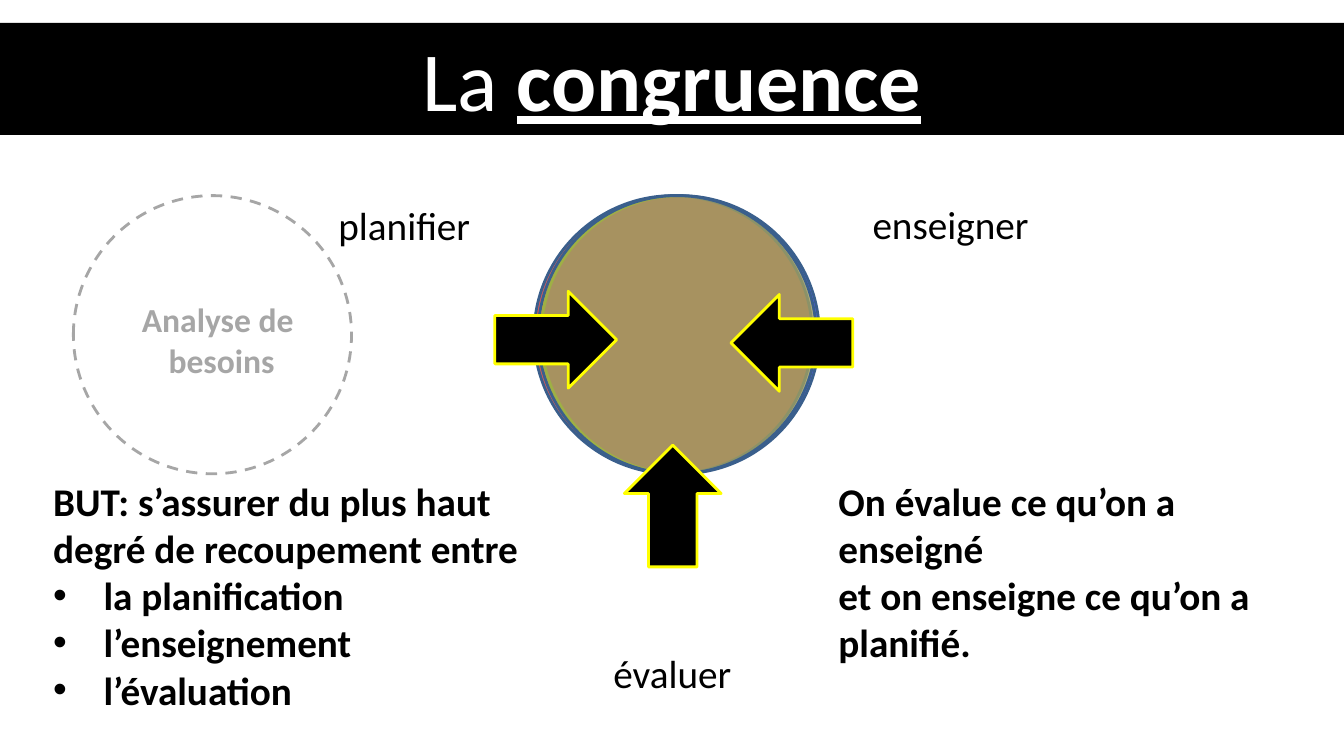
from lxml import etree
from pptx import Presentation
from pptx.dml.color import RGBColor
from pptx.enum.dml import MSO_LINE
from pptx.enum.shapes import MSO_SHAPE as SHAPE
from pptx.enum.text import MSO_ANCHOR as ANCHOR, MSO_AUTO_SIZE as AUTO, PP_ALIGN as ALIGN
from pptx.oxml.ns import qn
from pptx.util import Cm, Pt

COLORS = {
    "black": "000000", "white": "FFFFFF", "gray": "A6A6A6", "outline": "3A5F8C",
    "red": "C00000", "blue": "0000FF", "yellow": "FFFF00",
}


def rgb(name):
    return RGBColor.from_string(COLORS[name])


class SlideBuilder:
    """Holds the text style and the slide being filled."""

    def __init__(self, slide, font="Calibri", size=28):
        self.slide, self.font, self.size = slide, font, size

    def shape(self, kind, box, fill, line=None, alpha=None):
        """Box is left, top, width, height in cm; alpha is opacity in percent."""
        s = self.slide.shapes.add_shape(kind, *map(Cm, box))
        s.shadow.inherit = False
        s.fill.solid()
        s.fill.fore_color.rgb = rgb(fill)
        if alpha is not None:
            clr = s.fill._xPr.find(qn("a:solidFill"))[0]
            etree.SubElement(clr, qn("a:alpha")).set("val", str(alpha * 1000))
        if line:
            s.line.color.rgb = rgb(line)
            s.line.width = Pt(2)
        else:
            s.line.fill.background()
        return s

    def circle(self, left, fill, alpha, line="outline"):
        return self.shape(SHAPE.OVAL, (left, 4.93, 7.01, 7.01), fill, line, alpha)

    def arrow(self, left, top, rotation):
        s = self.shape(SHAPE.RIGHT_ARROW, (left, top, 3.07, 2.44), "black", "yellow")
        s.rotation = rotation

    def format_run(self, r, color, bold=False, size=None):
        r.font.name = self.font
        r.font.size = Pt(size or self.size)
        r.font.bold = bold
        r.font.color.rgb = rgb(color)

    def text(self, box, lines, color="black", bold=False, size=None,
             align=ALIGN.LEFT, wrap=False):
        tb = self.slide.shapes.add_textbox(*map(Cm, box))
        tf = tb.text_frame
        tf.text = "\n".join(lines)
        tf.word_wrap = wrap
        tf.auto_size = AUTO.SHAPE_TO_FIT_TEXT
        for p in tf.paragraphs:
            p.alignment = align
            for r in p.runs:
                self.format_run(r, color, bold, size)
        return tf

    def bullet(self, p):
        pPr = p._p.get_or_add_pPr()
        pPr.set("marL", str(Cm(1.27)))
        pPr.set("indent", str(-Cm(1.27)))
        etree.SubElement(pPr, qn("a:buFont")).set("typeface", "Arial")
        etree.SubElement(pPr, qn("a:buChar")).set("char", "•")

    def title(self, box, plain, stressed):
        s = self.shape(SHAPE.RECTANGLE, box, "black")
        tf = s.text_frame
        tf.word_wrap = True
        tf.auto_size = AUTO.SHAPE_TO_FIT_TEXT
        tf.vertical_anchor = ANCHOR.TOP
        p = tf.paragraphs[0]
        p.alignment = ALIGN.CENTER
        for wording, strong in ((plain, False), (stressed, True)):
            r = p.add_run()
            r.text = wording
            self.format_run(r, "white", strong, 60)
            r.font.underline = strong


def main():
    prs = Presentation()
    prs.slide_width, prs.slide_height = Cm(33.87), Cm(19.05)
    b = SlideBuilder(prs.slides.add_slide(prs.slide_layouts[6]))

    b.text((21.74, 4.93, 4.47, 1.45), ["enseigner"])
    b.text((8.28, 4.95, 3.86, 1.45), ["planifier"])
    b.text((15.19, 16.23, 3.51, 1.45), ["évaluer"], align=ALIGN.CENTER)

    for left, fill, alpha in ((13.46, "red", 64), (13.64, "blue", 64), (13.56, "yellow", 51)):
        b.circle(left, fill, alpha)

    b.title((0, 0.58, 33.87, 2.82), "La ", "congruence")

    needs = b.circle(1.85, "white", 64, "gray")
    needs.line.dash_style = MSO_LINE.DASH
    b.text((3.3, 7.42, 4.57, 2.31), ["Analyse de ", "besoins"], "gray", True, 24, ALIGN.CENTER)

    for left, top, rotation in ((12.47, 7.34, 0), (18.42, 7.42, 180), (15.42, 11.53, 270)):
        b.arrow(left, top, rotation)

    goal = b.text((1.09, 11.91, 15.52, 6.25), [
        "BUT: s’assurer du plus haut", "degré de recoupement entre",
        "la planification", "l’enseignement", "l’évaluation"], bold=True, wrap=True)
    for p in goal.paragraphs[2:]:
        b.bullet(p)
    b.text((20.88, 11.91, 12.57, 5.05), [
        "On évalue ce qu’on a enseigné", "et on enseigne ce qu’on a planifié."],
        bold=True, wrap=True)

    prs.save("out.pptx")


if __name__ == "__main__":
    main()
